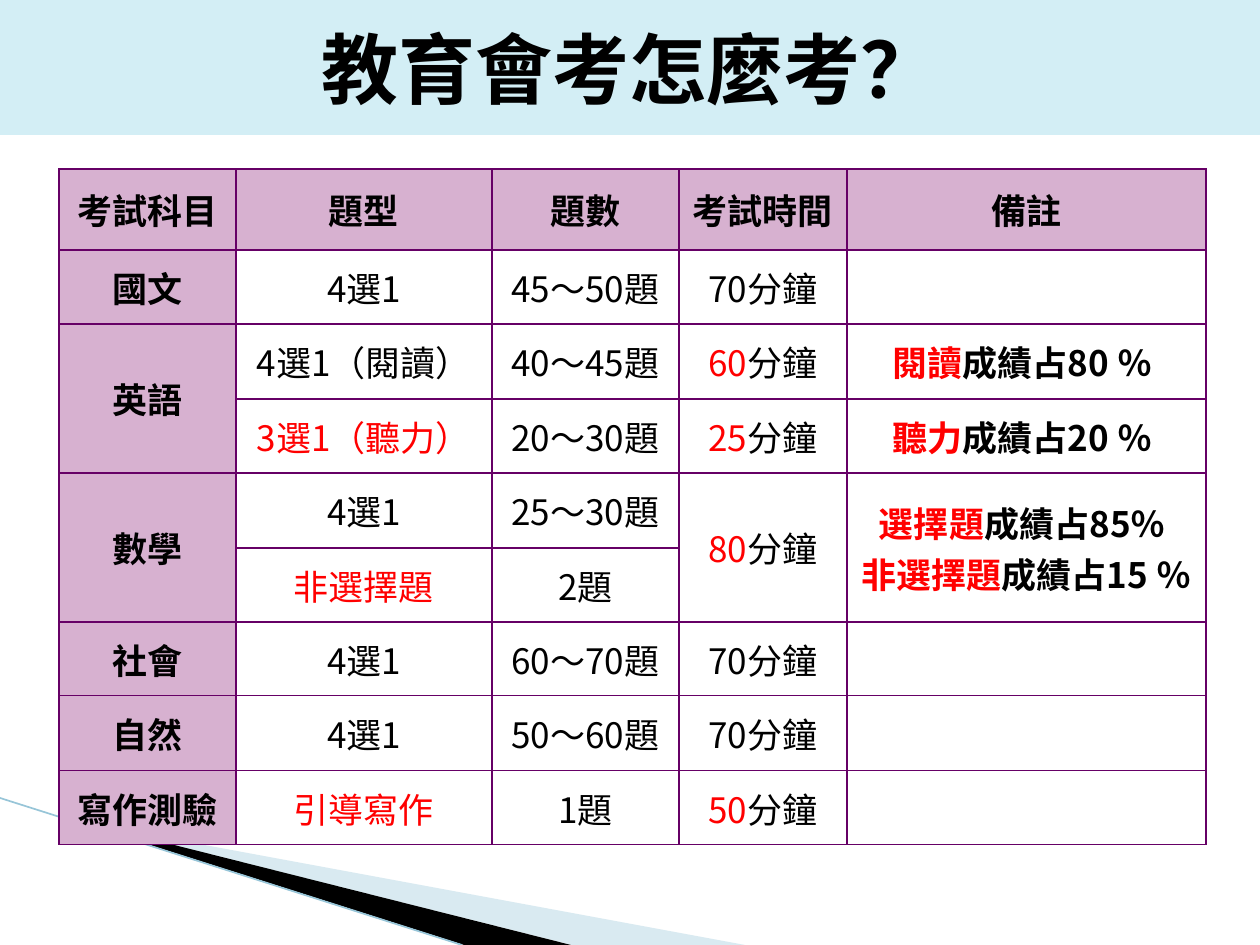
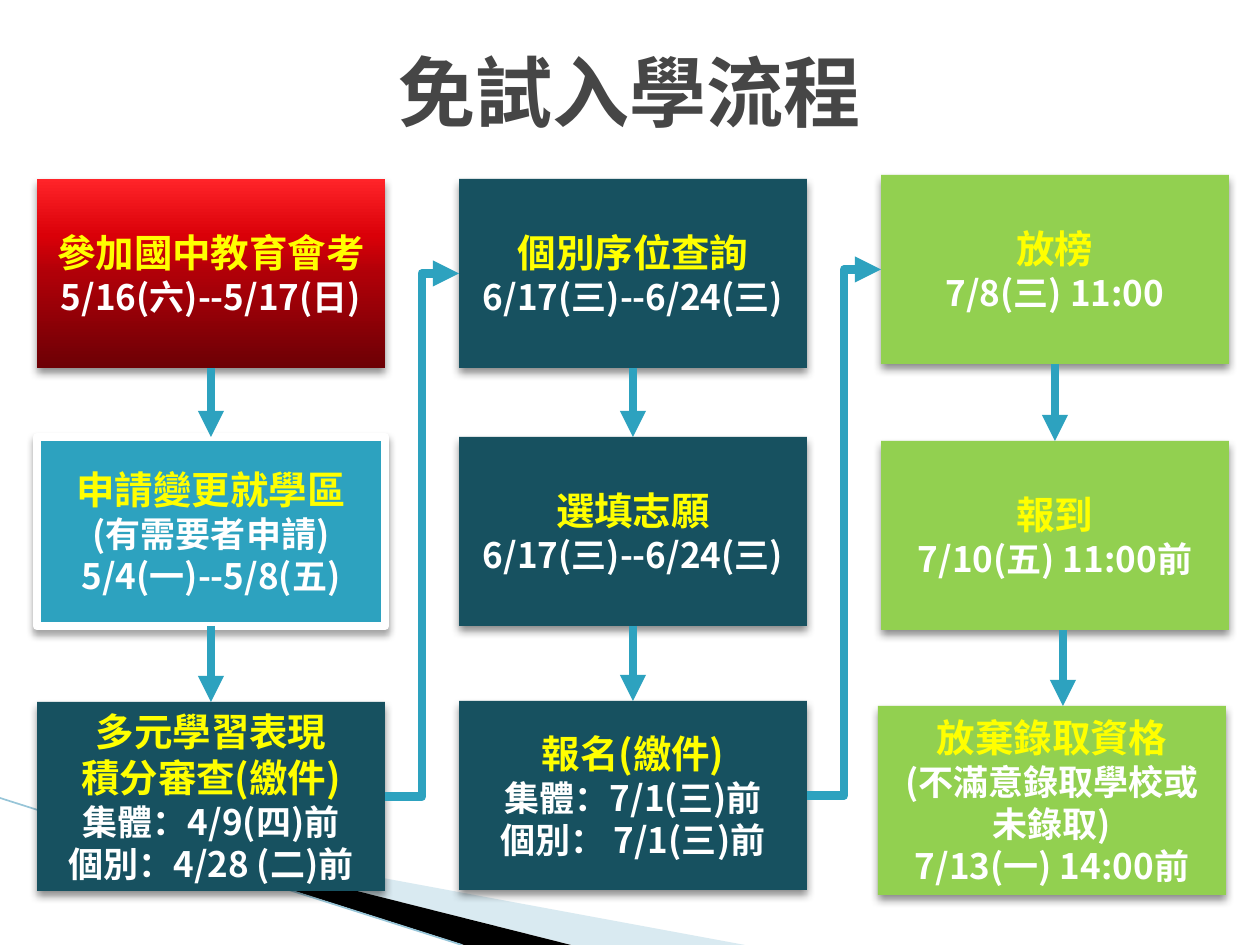
from itertools import pairwise

from lxml import etree
from pptx import Presentation
from pptx import util as u
from pptx.dml.color import RGBColor
from pptx.enum import shapes, text
from pptx.oxml.ns import qn

SCALE = 914400 / 126
FONT = "Noto Sans CJK SC"
HUES = {
    "black": "000000", "white": "FFFFFF", "gray": "464646", "red": "FF0000",
    "yellow": "FFFF00", "band": "D3EEF5", "pink": "D7B1D0", "plum": "660066",
    "pale": "A0CBDC", "thread": "97C5D8", "blue": "2DA2BF", "teal": "175160",
    "green": "92D050",
}
GLOW = [(0, "6D0005"), (50, "B00008"), (70, "DA0008"), (100, "FF2429")]

# Text between two bars is red.
EXAM = [
    ["考試科目", "題型", "題數", "考試時間", "備註"],
    ["國文", "4選1", "45～50題", "70分鐘", ""],
    ["英語", "4選1（閱讀）", "40～45題", "|60|分鐘", "|閱讀|成績占80 ％ "],
    ["", "|3選1（聽力）|", "20～30題", "|25|分鐘", "|聽力|成績占20 ％ "],
    ["數學", "4選1", "25～30題", "|80|分鐘",
     "|選擇題|成績占85％ \n|非選擇題|成績占15 ％"],
    ["", "|非選擇題|", "2題", "", ""],
    ["社會", "4選1", "60～70題", "70分鐘", ""],
    ["自然", "4選1", "50～60題", "70分鐘", ""],
    ["寫作測驗", "|引導寫作|", "1題", "|50|分鐘", ""],
]
WIDTHS = [177, 256, 187, 168, 359]
PAIRS = [(2, 0), (4, 0), (4, 3), (4, 4)]  # cells that span two rows

BOX_W, BOX_H = 348, 189
# Each step: left, top, fill, yellow lines, white lines
STEPS = [
    [(37, 179, "glow", ["參加國中教育會考"], ["5/16(六)--5/17(日)"]),
     (37, 437, "blue", ["申請變更就學區"], ["(有需要者申請)", "5/4(一)--5/8(五)"]),
     (37, 702, "teal", ["多元學習表現", "積分審查(繳件)"],
      ["集體：4/9(四)前", "個別：4/28 (二)前"])],
    [(459, 179, "teal", ["個別序位查詢"], ["6/17(三)--6/24(三)"]),
     (459, 437, "teal", ["選填志願"], ["6/17(三)--6/24(三)"]),
     (459, 701, "teal", ["報名(繳件)"], ["集體：7/1(三)前", "個別： 7/1(三)前"])],
    [(881, 175, "green", ["放榜"], ["7/8(三) 11:00"]),
     (881, 441, "green", ["報到"], ["7/10(五) 11:00前"]),
     (878, 706, "green", ["放棄錄取資格"],
      ["(不滿意錄取學校或未錄取)", "7/13(一) 14:00前"])],
]


def px(n):
    return u.Emu(round(n * SCALE))


def hue(name):
    return RGBColor.from_string(HUES[name])


def node(parent, tag, **attrs):
    """Append a DrawingML element to parent."""
    return etree.SubElement(parent, qn("a:" + tag),
                            {key: str(val) for key, val in attrs.items()})


def add_run(para, words, size, color, bold=True):
    run = para.add_run()
    run.text = words
    font = run.font
    font.size, font.bold = u.Pt(size), bold
    font.color.rgb = hue(color)
    font.name = FONT
    node(run._r.rPr, "ea", typeface=FONT)


def add_lines(frame, lines):
    """Fill a frame with centred lines, each a list of add_run arguments."""
    frame.word_wrap = True
    for i, line in enumerate(lines):
        para = frame.add_paragraph() if i else frame.paragraphs[0]
        para.alignment = text.PP_ALIGN.CENTER
        for run in line:
            add_run(para, *run)


def set_title(slide, words, color, top, height, fill=None):
    title = slide.shapes.title
    title.left, title.top = 0, px(top)
    title.width, title.height = px(1260), px(height)
    if fill:
        title.fill.solid()
        title.fill.fore_color.rgb = hue(fill)
    frame = title.text_frame
    frame.auto_size = text.MSO_AUTO_SIZE.NONE
    frame.vertical_anchor = text.MSO_ANCHOR.MIDDLE
    add_lines(frame, [[(words, 44, color)]])


def style_line(line, color, width):
    line.line.color.rgb = hue(color)
    line.line.width = u.Pt(width)
    node(line._element.spPr, "effectLst")


def add_wedge(slide, color, points, alpha=None):
    path = slide.shapes.build_freeform(*points[0], scale=SCALE)
    path.add_line_segments(points[1:])
    wedge = path.convert_to_shape()
    wedge.shadow.inherit = False
    wedge.fill.solid()
    wedge.fill.fore_color.rgb = hue(color)
    wedge.line.fill.background()
    if alpha:
        tint = wedge._element.spPr.find(qn("a:solidFill"))[0]
        node(tint, "alpha", val=alpha * 1000)


def add_sweep(slide):
    """Draw the wedges and thin line at the foot of the slide."""
    add_wedge(slide, "pale", [(69, 820), (745, 945), (572, 945), (69, 819)], 40)
    add_wedge(slide, "black", [(67, 818), (571, 945), (464, 945), (68, 819)])
    thread = slide.shapes.add_connector(
        shapes.MSO_CONNECTOR.STRAIGHT, 0, px(798), px(462), px(945))
    style_line(thread, "thread", 0.95)


def add_edges(cell):
    props = cell._tc.get_or_add_tcPr()
    for i, side in enumerate(("lnL", "lnR", "lnT", "lnB")):
        edge = etree.Element(qn("a:" + side), w=str(u.Pt(1)))
        node(node(edge, "solidFill"), "srgbClr", val=HUES["plum"])
        props.insert(i, edge)


def fill_cell(cell, words, head, bold):
    cell.vertical_anchor = text.MSO_ANCHOR.MIDDLE
    cell.margin_left = cell.margin_right = px(2)
    cell.margin_top = cell.margin_bottom = px(2)
    if head:
        cell.fill.solid()
        cell.fill.fore_color.rgb = hue("pink")
    else:
        cell.fill.background()
    add_edges(cell)
    if words:
        add_lines(cell.text_frame, [
            [(part, 20, "red" if i % 2 else "black", bold)
             for i, part in enumerate(line.split("|")) if part]
            for line in words.split("\n")])


def add_exam(slide):
    tops = [169] + [250 + round(74.4 * i) for i in range(len(EXAM))]
    grid = slide.shapes.add_table(
        len(EXAM), len(WIDTHS), px(59), px(tops[0]),
        px(sum(WIDTHS)), px(tops[-1] - tops[0])).table
    grid.first_row = grid.horz_banding = False
    for col, width in zip(grid.columns, WIDTHS):
        col.width = px(width)
    for row, (top, end) in zip(grid.rows, pairwise(tops)):
        row.height = px(end - top)
    for r, row in enumerate(EXAM):
        for c, words in enumerate(row):
            head = r == 0 or c == 0
            fill_cell(grid.cell(r, c), words, head, head or c == 4)
    for r, c in PAIRS:
        grid.cell(r, c).merge(grid.cell(r + 1, c))


def fill_glow(box):
    """Give the box an upward gradient from dark to bright red."""
    box.fill.gradient()
    box.fill.gradient_angle = 90
    stops = box._element.spPr.find(qn("a:gradFill")).find(qn("a:gsLst"))
    for stop in list(stops):
        stops.remove(stop)
    for spot, color in GLOW:
        node(node(stops, "gs", pos=spot * 1000), "srgbClr", val=color)


def add_shade(box, alpha, blur, drop):
    box.shadow.inherit = False
    effects = box._element.spPr.find(qn("a:effectLst"))
    shade = node(effects, "outerShdw", blurRad=u.Pt(blur), dist=u.Pt(drop),
                 dir=5400000, algn="ctr", rotWithShape=0)
    tint = node(shade, "srgbClr", val=HUES["black"])
    node(tint, "alpha", val=alpha * 1000)


def add_step(slide, left, top, fill, heads, notes):
    box = slide.shapes.add_shape(shapes.MSO_SHAPE.RECTANGLE, px(left), px(top),
                                 px(BOX_W), px(BOX_H))
    if fill == "glow":
        fill_glow(box)
    else:
        box.fill.solid()
        box.fill.fore_color.rgb = hue(fill)
    if fill == "blue":
        box.line.color.rgb = hue("white")
        box.line.width = u.Pt(5)
        add_shade(box, 35, 4, 3)
    else:
        box.line.fill.background()
        add_shade(box, 45, 5, 3)
    box.text_frame.vertical_anchor = text.MSO_ANCHOR.MIDDLE
    add_lines(box.text_frame, [[(line, 22, "yellow")] for line in heads]
              + [[(line, 20, "white")] for line in notes])
    return box


def add_arrow(slide, kind, ends=(0, 0, 0, 0)):
    arrow = slide.shapes.add_connector(kind, *map(px, ends))
    style_line(arrow, "blue", 5)
    node(arrow.line._get_or_add_ln(), "tailEnd", type="triangle")
    return arrow


def join(slide, kind, start, out, end, into):
    """Join side 'out' of one box to side 'into' of another."""
    arrow = add_arrow(slide, kind)
    arrow.begin_connect(start, out)
    arrow.end_connect(end, into)


def add_flow(slide):
    kinds = shapes.MSO_CONNECTOR
    cols = [[add_step(slide, *step) for step in col] for col in STEPS]
    for col in cols:
        for start, end in pairwise(col):
            if start.left == end.left:
                join(slide, kinds.STRAIGHT, start, 2, end, 0)
    add_arrow(slide, kinds.STRAIGHT, (1063, 630, 1063, 706))
    for prev, col in pairwise(cols):
        join(slide, kinds.ELBOW, prev[-1], 3, col[0], 1)


def add_page(deck):
    slide = deck.slides.add_slide(deck.slide_layouts[5])
    add_sweep(slide)
    return slide


def main():
    deck = Presentation()
    deck.slide_width, deck.slide_height = px(1260), px(945)

    exam = add_page(deck)
    set_title(exam, "教育會考怎麼考？", "black", 0, 135, "band")
    add_exam(exam)

    flow = add_page(deck)
    set_title(flow, "免試入學流程", "gray", 1, 179)
    add_flow(flow)

    deck.save("out.pptx")


if __name__ == "__main__":
    main()
